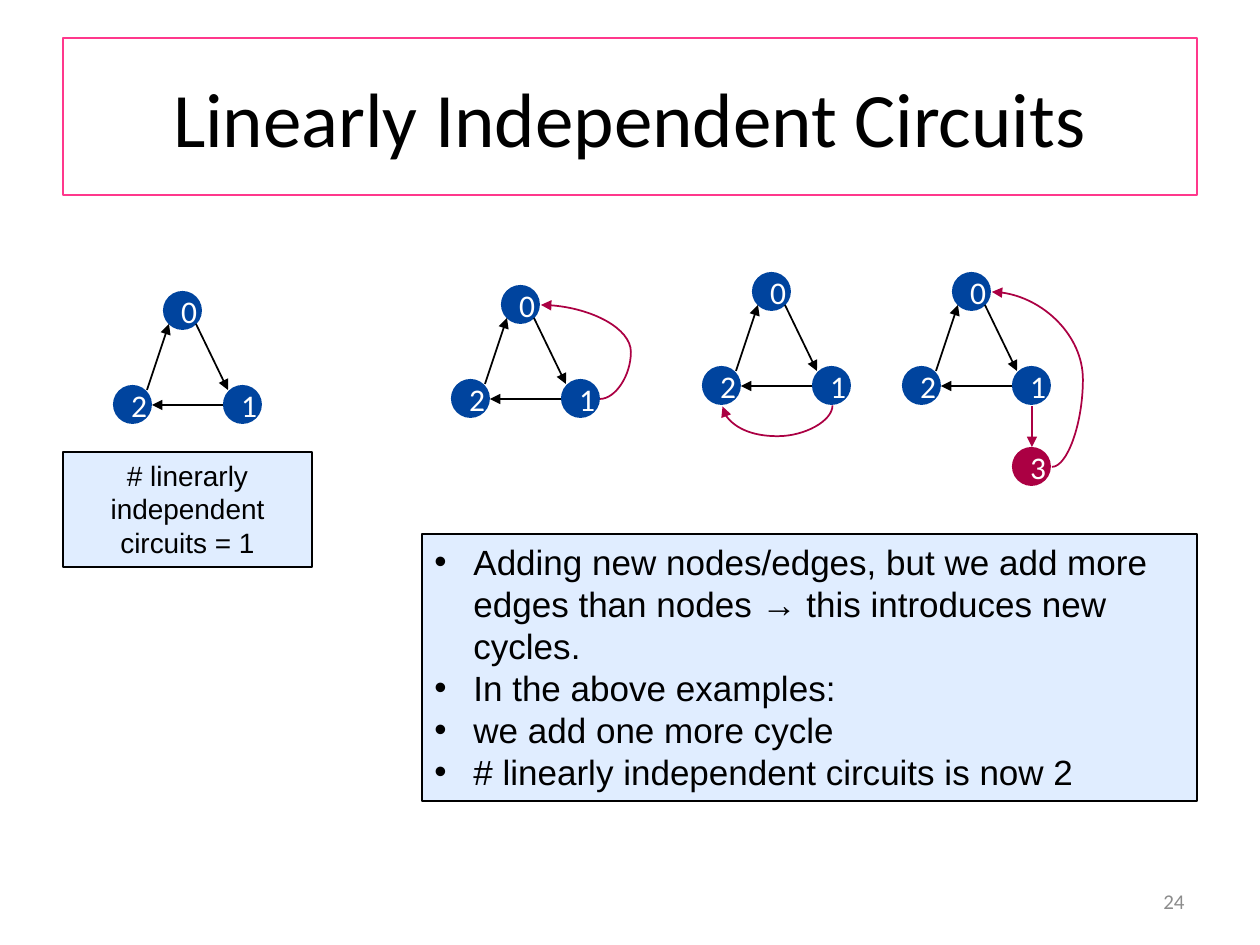
from dataclasses import dataclass

from lxml import etree
from pptx import Presentation
from pptx.dml.color import RGBColor
from pptx.enum.shapes import MSO_CONNECTOR, MSO_SHAPE
from pptx.enum.text import MSO_ANCHOR, PP_ALIGN
from pptx.oxml.ns import qn
from pptx.util import Emu, Pt

PX = 914400 // 126
OVAL, RECT = MSO_SHAPE.OVAL, MSO_SHAPE.RECTANGLE
LINE, CURVE = MSO_CONNECTOR.STRAIGHT, MSO_CONNECTOR.CURVE
LEFT, MID, RIGHT = PP_ALIGN.LEFT, PP_ALIGN.CENTER, PP_ALIGN.RIGHT
TOP, CENTER = MSO_ANCHOR.TOP, MSO_ANCHOR.MIDDLE


@dataclass
class Theme:
    black: str = "000000"
    white: str = "FFFFFF"
    grey: str = "8C8C8C"
    pink: str = "FF388C"
    blue: str = "00449E"
    red: str = "AB0043"
    pale: str = "C3DDFF"
    head: str = "Calibri"
    body: str = "Arial"
    title: int = 44
    list: int = 20
    node: int = 18
    note: int = 16
    foot: int = 12


def px(*vals):
    return [Emu(round(v * PX)) for v in vals]


def child(node, tag, **attrs):
    return etree.SubElement(node, qn(tag), attrs)


class Deck:
    NODE = 39
    SPOTS = {"0": (50, 0), "1": (110, 94), "2": (0, 94)}
    EDGES = [(83, 33, 115, 99), (110, 114, 39, 114), (34, 99, 56, 33)]

    def __init__(self, theme, slide):
        self.theme, self.slide = theme, slide

    def label(self, shape, lines, font, size, color, align=MID, anchor=CENTER):
        frame = shape.text_frame
        frame.word_wrap = True
        frame.vertical_anchor = anchor
        frame.text = "\n".join(lines)
        style = {"name": font, "size": Pt(size)}
        for para in frame.paragraphs:
            para.alignment = align
            for key, val in style.items():
                setattr(para.runs[0].font, key, val)
            para.runs[0].font.color.rgb = RGBColor.from_string(color)

    def edge(self, shape, color, width):
        shape.line.color.rgb = RGBColor.from_string(color)
        shape.line.width = Pt(width)

    def title(self, text, *box):
        shape = self.slide.shapes.title
        for key, val in zip(("left", "top", "width", "height"), px(*box)):
            setattr(shape, key, val)
        self.edge(shape, self.theme.pink, 1)
        self.label(shape, [text], self.theme.head, self.theme.title, self.theme.black)

    def foot(self, text, *box):
        shape = self.slide.shapes.add_textbox(*px(*box))
        self.label(shape, [text], self.theme.head, self.theme.foot, self.theme.grey, RIGHT)

    def shape(self, kind, fill, *box):
        shape = self.slide.shapes.add_shape(kind, *px(*box))
        shape.shadow.inherit = False
        shape.fill.solid()
        shape.fill.fore_color.rgb = RGBColor.from_string(fill)
        return shape

    def node(self, text, x, y, fill):
        shape = self.shape(OVAL, fill, x, y, self.NODE, self.NODE)
        shape.line.fill.background()
        self.label(shape, [text], self.theme.head, self.theme.node, self.theme.white)

    def panel(self, lines, size, align, *box):
        shape = self.shape(RECT, self.theme.pale, *box)
        color = shape._element.spPr.find(".//" + qn("a:srgbClr"))
        child(color, "a:alpha", val="50000")
        self.edge(shape, self.theme.black, 0.75)
        self.label(shape, lines, self.theme.body, size, self.theme.black, align, TOP)
        return shape

    def bullets(self, lines, *box):
        shape = self.panel(lines, self.theme.list, LEFT, *box)
        indent = px(39)[0]
        for para in shape.text_frame.paragraphs:
            props = para._p.get_or_add_pPr()
            props.set("marL", str(indent))
            props.set("indent", str(-indent))
            child(props, "a:buFont", typeface=self.theme.body)
            child(props, "a:buChar", char="•")

    def arrow(self, kind, color, *ends):
        link = self.slide.shapes.add_connector(kind, *px(*ends))
        self.edge(link, color, 1)
        child(link._element.spPr.find(qn("a:ln")), "a:tailEnd", type="triangle")
        child(link._element.spPr, "a:effectLst")
        return link

    def bend(self, link, ratio):
        guides = link._element.spPr.find(qn("a:prstGeom")).find(qn("a:avLst"))
        child(guides, "a:gd", name="adj1", fmla=f"val {round(ratio * 100000)}")

    def loop(self, x1, y1, x2, y2, out=31):
        """Curve that leaves to the right and swings back left."""
        link = self.arrow(CURVE, self.theme.red, x1, y1, x2, y2)
        self.bend(link, -out / (x1 - x2))

    def sag(self, x1, x2, y, out=31):
        """Curve that hangs below two points: an upright one turned by 90 degrees."""
        mid, half = (x1 + x2) // 2, (x1 - x2) // 2
        link = self.arrow(CURVE, self.theme.red, mid, y - half, mid + 1, y + half)
        link.rotation = 90
        link._element.spPr.find(qn("a:xfrm")).set("rot", str(90 * 60000))
        self.bend(link, out)

    def graph(self, x, y):
        for text, (dx, dy) in self.SPOTS.items():
            self.node(text, x + dx, y + dy, self.theme.blue)
        for x1, y1, x2, y2 in self.EDGES:
            self.arrow(LINE, self.theme.black, x + x1, y + y1, x + x2, y + y2)


def main():
    prs = Presentation()
    prs.slide_width, prs.slide_height = px(1260, 945)
    theme = Theme()
    deck = Deck(theme, prs.slides.add_slide(prs.slide_layouts[5]))

    deck.title("Linearly Independent Circuits", 63, 38, 1134, 157)
    deck.foot("24", 903, 876, 294, 50)
    for x, y in [(113, 291), (451, 285), (702, 272), (902, 272)]:
        deck.graph(x, y)

    deck.loop(600, 399, 541, 305)
    deck.sag(832, 722, 406)
    deck.node("3", 1012, 447, theme.red)
    deck.arrow(LINE, theme.red, 1032, 406, 1032, 447)
    deck.loop(1052, 467, 992, 292)

    deck.panel(["# linerarly independent circuits = 1"], theme.note, MID, 63, 452, 249, 115)
    deck.bullets([
        "Adding new nodes/edges, but we add more edges than nodes → this introduces new cycles.",
        "In the above examples:",
        "we add one more cycle",
        "# linearly independent circuits is now 2",
    ], 422, 534, 775, 267)
    prs.save("out.pptx")


if __name__ == "__main__":
    main()
